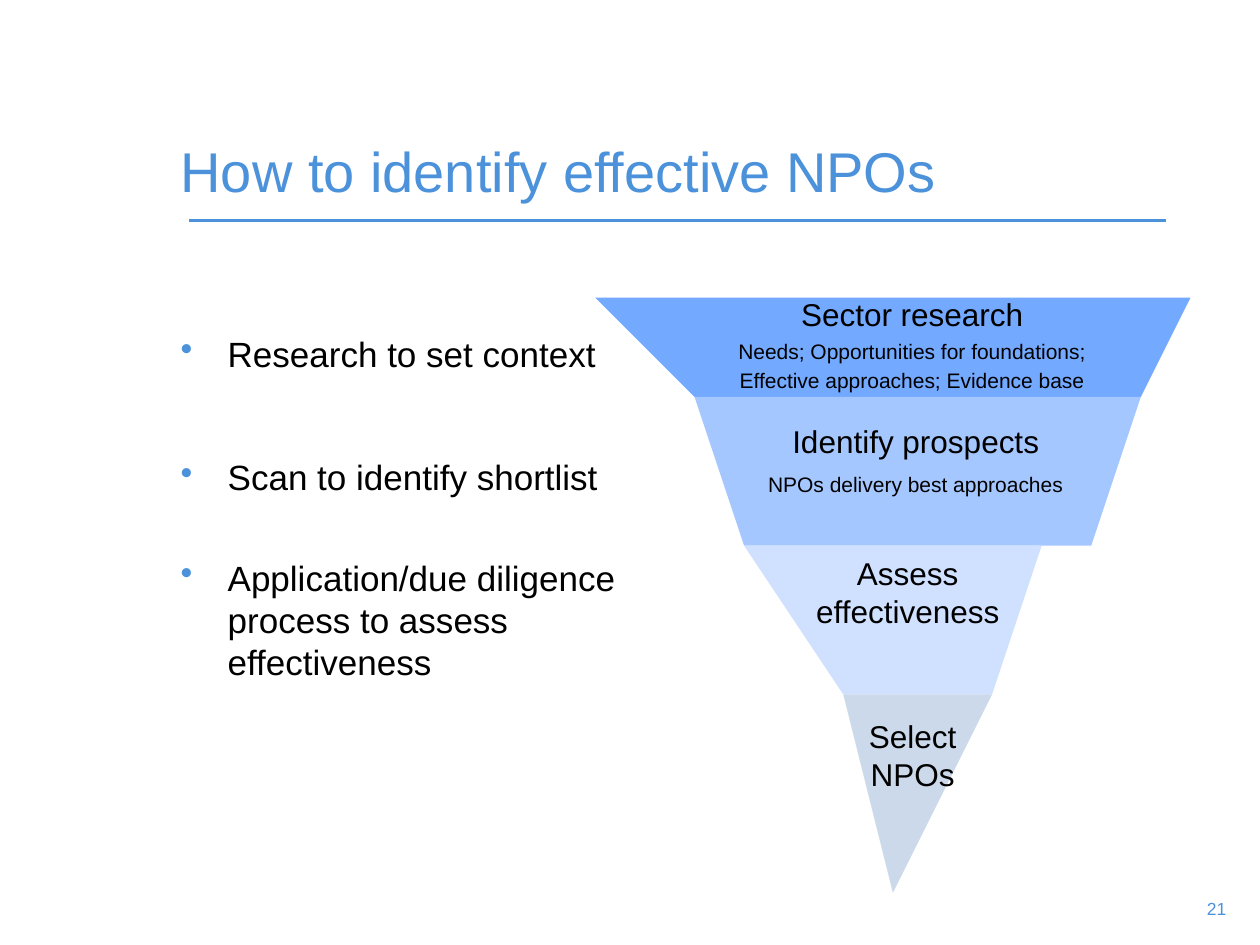
from dataclasses import dataclass

from lxml import etree
from pptx import Presentation
from pptx.dml.color import RGBColor
from pptx.enum.shapes import MSO_CONNECTOR
from pptx.enum.text import MSO_ANCHOR, PP_ALIGN
from pptx.oxml.ns import qn
from pptx.util import Cm, Pt

STRAIGHT = MSO_CONNECTOR.STRAIGHT
TOP, BOTTOM = MSO_ANCHOR.TOP, MSO_ANCHOR.BOTTOM
LEFT, CENTER, RIGHT = PP_ALIGN.LEFT, PP_ALIGN.CENTER, PP_ALIGN.RIGHT
FONT, ACCENT, BLACK = "Arial", "4B92DB", "000000"
FUNNEL_CENTER = 18.38
BULLET_INDENT = Cm(0.95)


@dataclass(frozen=True)
class Line:
    text: str
    size: float
    color: str = BLACK
    space_before: float = 0
    spacing: float = 1.0
    bullet: bool = False


@dataclass(frozen=True)
class Box:
    left: float
    top: float
    width: float
    height: float


@dataclass(frozen=True)
class Tier:
    top: float
    bottom: float
    half_top: float
    half_bottom: float
    fill: str
    label: Box
    lines: tuple[Line, ...]


BULLETS = (
    Line("Research to set context", 20, bullet=True),
    Line("Scan to identify shortlist", 20, space_before=46.5, bullet=True),
    Line("Application/due diligence process to assess effectiveness", 20,
         space_before=33.5, bullet=True),
)

TIERS = (
    Tier(5.69, 8.08, 5.93, 4.62, "73A9FF", Box(13.39, 5.82, 10, 2.24), (
        Line("Sector research", 18),
        Line("Needs; Opportunities for foundations;", 12, space_before=7, spacing=0.7),
        Line("Effective approaches; Evidence base", 12, space_before=7, spacing=0.7))),
    Tier(8.26, 10.83, 4.53, 3.18, "A5C7FF", Box(14.5, 8.38, 7.92, 1.78), (
        Line("Identify prospects", 18),
        Line("NPOs delivery best approaches", 12, space_before=7))),
    Tier(11, 14.2, 3.09, 1.65, "CFE1FF", Box(15.75, 11.05, 5.1, 3.2), (
        Line("Assess effectiveness", 18),)),
    Tier(14.35, 17.93, 1.54, 0, "CCD9EA", Box(16.56, 14.33, 3.68, 1.78), (
        Line("Select\nNPOs", 18),)),
)


def rgb(value: str) -> RGBColor:
    """Turn a hex string into a colour."""
    return RGBColor.from_string(value)


def add_bullet(paragraph) -> None:
    """Give a paragraph a hanging round bullet in the accent colour."""
    properties = paragraph._p.get_or_add_pPr()
    properties.set("marL", str(BULLET_INDENT))
    properties.set("indent", str(-BULLET_INDENT))
    bullet_color = etree.SubElement(properties, qn("a:buClr"))
    etree.SubElement(bullet_color, qn("a:srgbClr"), val=ACCENT)
    etree.SubElement(properties, qn("a:buChar"), char="•")


def add_text(slide, box: Box, lines: tuple[Line, ...], align=LEFT, anchor=TOP) -> None:
    """Add a wrapping text box with one paragraph for each line."""
    shape = slide.shapes.add_textbox(
        Cm(box.left), Cm(box.top), Cm(box.width), Cm(box.height))
    frame = shape.text_frame
    frame.word_wrap = True
    frame.vertical_anchor = anchor
    for index, line in enumerate(lines):
        paragraph = frame.add_paragraph() if index else frame.paragraphs[0]
        if line.bullet:
            add_bullet(paragraph)
        paragraph.alignment = align
        paragraph.line_spacing = line.spacing
        paragraph.space_before = Pt(line.space_before)
        for part_index, part in enumerate(line.text.split("\n")):
            if part_index:
                paragraph.add_line_break()
            run = paragraph.add_run()
            run.text = part
            run.font.name = FONT
            run.font.size = Pt(line.size)
            run.font.color.rgb = rgb(line.color)


def add_rule(slide, left: float, right: float, top: float) -> None:
    """Draw the horizontal rule below the title."""
    rule = slide.shapes.add_connector(STRAIGHT, Cm(left), Cm(top), Cm(right), Cm(top))
    rule.line.color.rgb = rgb(ACCENT)
    rule.line.width = Pt(1.5)
    etree.SubElement(rule._element.spPr, qn("a:effectLst"))


def add_tier(slide, tier: Tier) -> None:
    """Draw one funnel tier, narrowing to a point when its base has no width."""
    corners = [
        (FUNNEL_CENTER + tier.half_top, tier.top),
        (FUNNEL_CENTER + tier.half_bottom, tier.bottom),
    ]
    if tier.half_bottom:
        corners.append((FUNNEL_CENTER - tier.half_bottom, tier.bottom))
    builder = slide.shapes.build_freeform(
        FUNNEL_CENTER - tier.half_top, tier.top, scale=Cm(1))
    builder.add_line_segments(corners, close=True)
    shape = builder.convert_to_shape()
    shape.shadow.inherit = False
    shape.fill.solid()
    shape.fill.fore_color.rgb = rgb(tier.fill)
    shape.line.fill.background()


def main() -> None:
    """Build the slide and save it."""
    presentation = Presentation()
    presentation.slide_width, presentation.slide_height = Cm(25.4), Cm(19.05)
    slide = presentation.slides.add_slide(presentation.slide_layouts[6])
    add_rule(slide, 3.81, 23.5, 4.45)
    add_text(slide, Box(23.5, 17.98, 1.47, 0.64), (Line("21", 10, ACCENT),), RIGHT)
    add_text(slide, Box(3.39, 0.64, 20.11, 3.6),
             (Line("How to identify effective NPOs", 32, ACCENT),), anchor=BOTTOM)
    add_text(slide, Box(3.39, 6.58, 9.86, 10.16), BULLETS)
    for tier in TIERS:
        add_tier(slide, tier)
    for tier in TIERS:
        add_text(slide, tier.label, tier.lines, CENTER)
    presentation.save("out.pptx")


if __name__ == "__main__":
    main()
